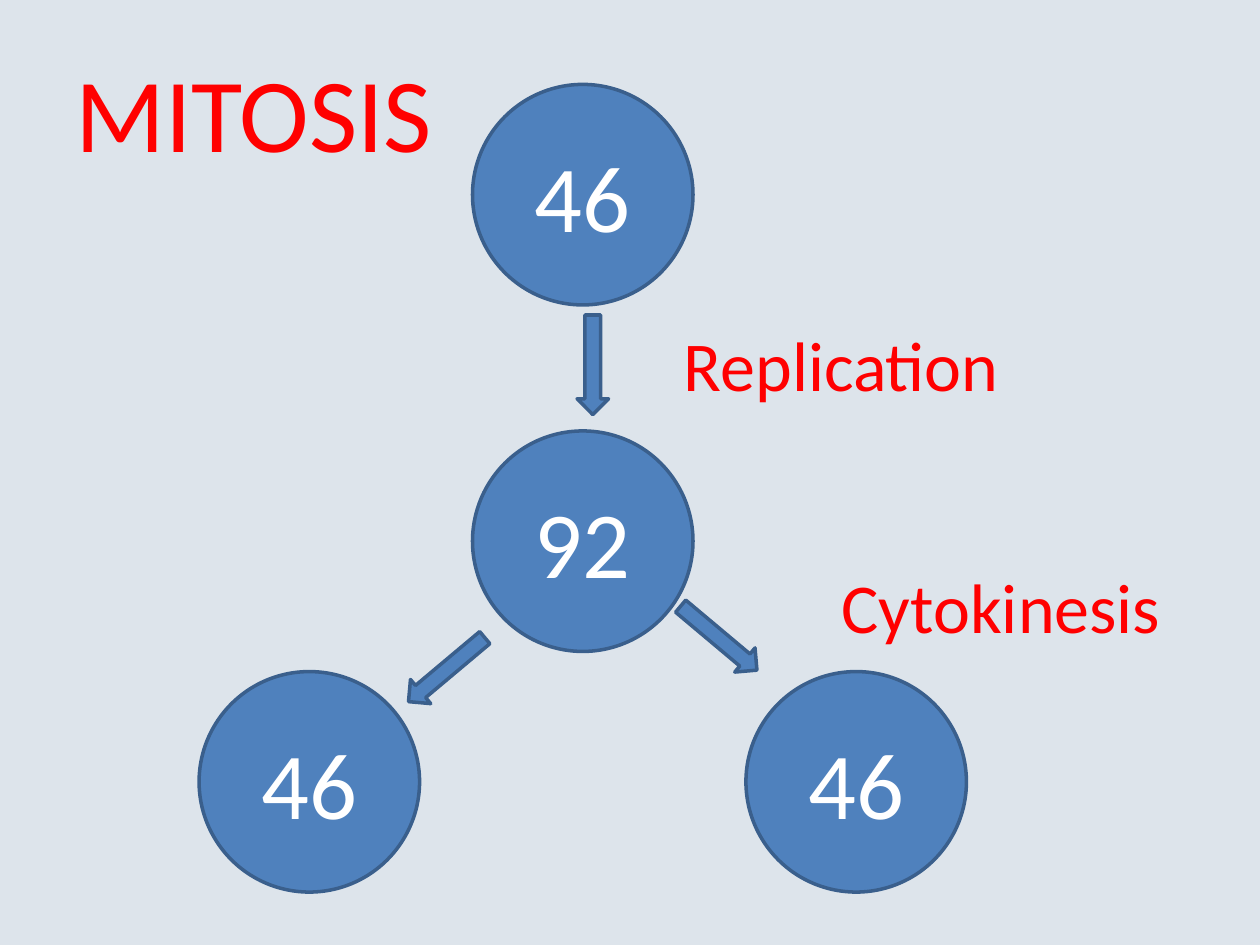
from dataclasses import dataclass

from pptx import Presentation
from pptx.dml.color import RGBColor
from pptx.enum.shapes import MSO_SHAPE
from pptx.enum.text import MSO_ANCHOR, MSO_AUTO_SIZE, PP_ALIGN
from pptx.util import Inches, Pt


@dataclass(frozen=True)
class Theme:
    font: str = "Calibri"
    background: RGBColor = RGBColor(0xDD, 0xE4, 0xEB)
    fill: RGBColor = RGBColor(0x4F, 0x81, 0xBD)
    outline: RGBColor = RGBColor(0x3A, 0x5F, 0x8C)
    number: RGBColor = RGBColor(0xFF, 0xFF, 0xFF)
    accent: RGBColor = RGBColor(0xFF, 0x00, 0x00)
    title_size: Pt = Pt(60)
    number_size: Pt = Pt(54)
    label_size: Pt = Pt(40)
    outline_width: Pt = Pt(2)


THEME = Theme()
CELL_SIZE = 1.75
ARROW_WIDTH, ARROW_LENGTH = 0.25, 0.79


def write_text(box, text, size, color, alignment=PP_ALIGN.LEFT):
    para = box.text_frame.paragraphs[0]
    para.text = text
    para.alignment = alignment
    para.font.name = THEME.font
    para.font.size = size
    para.font.color.rgb = color


def add_solid(page, kind, left, top, width, height):
    solid = page.shapes.add_shape(
        kind, Inches(left), Inches(top), Inches(width), Inches(height))
    solid.shadow.inherit = False
    solid.fill.solid()
    solid.fill.fore_color.rgb = THEME.fill
    solid.line.color.rgb = THEME.outline
    solid.line.width = THEME.outline_width
    return solid


def add_cell(page, left, top, chromosomes):
    cell = add_solid(page, MSO_SHAPE.FLOWCHART_CONNECTOR,
                     left, top, CELL_SIZE, CELL_SIZE)
    cell.text_frame.vertical_anchor = MSO_ANCHOR.MIDDLE
    write_text(cell, chromosomes, THEME.number_size, THEME.number,
               PP_ALIGN.CENTER)


def add_arrow(page, left, top, rotation):
    arrow = add_solid(page, MSO_SHAPE.DOWN_ARROW,
                      left, top, ARROW_WIDTH, ARROW_LENGTH)
    arrow.rotation = rotation


def add_label(page, left, top, width, height, text):
    label = page.shapes.add_textbox(
        Inches(left), Inches(top), Inches(width), Inches(height))
    label.text_frame.word_wrap = False
    label.text_frame.auto_size = MSO_AUTO_SIZE.SHAPE_TO_FIT_TEXT
    write_text(label, text, THEME.label_size, THEME.accent)


def place_title(page, left, top, width, height, text):
    title = page.shapes.title
    title.left, title.top = Inches(left), Inches(top)
    title.width, title.height = Inches(width), Inches(height)
    title.text_frame.vertical_anchor = MSO_ANCHOR.TOP
    title.text_frame.auto_size = MSO_AUTO_SIZE.NONE
    write_text(title, text, THEME.title_size, THEME.accent)


def draw_division(page, left, top, width, height):
    middle = left + (width - CELL_SIZE) / 2
    right = left + width - CELL_SIZE
    bottom = top + height - CELL_SIZE
    add_arrow(page, middle + 0.83, top + 1.83, 0)
    add_cell(page, middle, top, "46")
    add_cell(page, middle, top + 2.75, "92")
    add_cell(page, left, bottom, "46")
    add_cell(page, right, bottom, "46")
    add_arrow(page, middle - 0.33, top + 4.25, 50)
    add_arrow(page, middle + 1.83, top + 4, 310)
    add_label(page, middle + 1.58, top + 1.83, 2.73, 0.77, "Replication")
    add_label(page, middle + 2.83, top + 3.75, 2.76, 0.77, "Cytokinesis")


def main():
    deck = Presentation()
    deck.slide_width, deck.slide_height = Inches(10), Inches(7.5)
    page = deck.slides.add_slide(deck.slide_layouts.get_by_name("Title Only"))
    page.background.fill.solid()
    page.background.fill.fore_color.rgb = THEME.background
    draw_division(page, 1.58, 0.67, 6.09, 6.41)
    place_title(page, 0.5, 0.33, 3.08, 1.11, "MITOSIS")
    deck.save("out.pptx")


if __name__ == "__main__":
    main()
